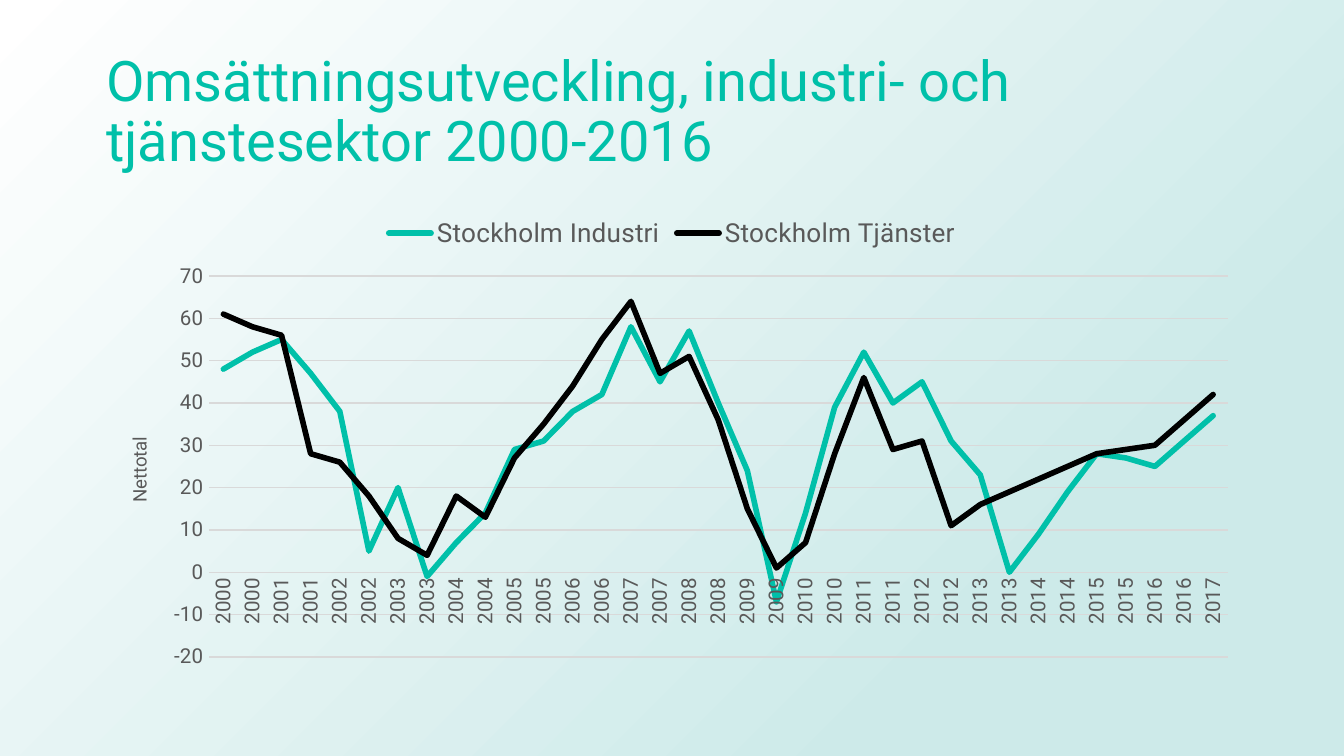
from lxml.etree import SubElement
from pptx import Presentation
from pptx.chart.data import CategoryChartData
from pptx.dml.color import RGBColor
from pptx.enum.chart import XL_CHART_TYPE, XL_LEGEND_POSITION, XL_TICK_MARK
from pptx.enum.shapes import MSO_SHAPE
from pptx.enum.text import MSO_ANCHOR
from pptx.oxml import parse_xml
from pptx.oxml.ns import nsdecls, qn
from pptx.util import Pt

PX = 914400 / 134.4
FONT = "Roboto"
TEAL, BLACK, GREY, PALE = "00C0A9", "000000", "595959", "D9D9D9"

YEARS = [str(2000 + i // 2) for i in range(35)]
SERIES = [
    ("Stockholm Industri", TEAL,
     [48, 52, 55, 47, 38, 5, 20, -1, 7, 14, 29, 31, 38, 42, 58, 45, 57, 40,
      24, -7, 14, 39, 52, 40, 45, 31, 23, 0, 9, 19, 28, 27, 25, 31, 37]),
    ("Stockholm Tjänster", BLACK,
     [61, 58, 56, 28, 26, 18, 8, 4, 18, 13, 27, 35, 44, 55, 64, 47, 51, 36,
      15, 1, 7, 28, 46, 29, 31, 11, 16, 19, 22, 25, 28, 29, 30, 36, 42]),
]


def px(*lengths):
    return [round(n * PX) for n in lengths]


def rgb(value):
    return RGBColor.from_string(value)


def style_font(font, size, color):
    font.name, font.size, font.bold = FONT, Pt(size), False
    font.color.rgb = rgb(color)


def style_line(line, color, width):
    line.color.rgb = rgb(color)
    line.width = Pt(width)


def write(tf, text, size=10, color=GREY, spacing=None):
    p = tf.paragraphs[0]
    p.line_spacing = spacing
    r = p.add_run()
    r.text = text
    style_font(r.font, size, color)


def place(parent, index, inner=False, **fractions):
    """Give a chart part a fixed place, in fractions of the chart."""
    for old in parent.findall(qn("c:layout")):
        parent.remove(old)
    layout = parent.makeelement(qn("c:layout"), {})
    parent.insert(index, layout)
    manual = SubElement(layout, qn("c:manualLayout"))
    if inner:
        SubElement(manual, qn("c:layoutTarget"), val="inner")
    for side in "xy":
        SubElement(manual, qn(f"c:{side}Mode"), val="edge")
    for side, value in fractions.items():
        SubElement(manual, qn(f"c:{side}"), val=str(value))


def add_background(s, x, y, w, h):
    sp = s.shapes.add_shape(MSO_SHAPE.RECTANGLE, *px(x, y, w, h))
    sp.shadow.inherit = False
    sp.line.fill.background()
    # Radial gradient centred on the bottom right corner
    sp._element.spPr.find(qn("a:prstGeom")).addnext(parse_xml(
        f'<a:gradFill {nsdecls("a")} rotWithShape="1"><a:gsLst>'
        '<a:gs pos="23000"><a:srgbClr val="CDEAE9"/></a:gs>'
        '<a:gs pos="100000"><a:srgbClr val="FFFFFF"/></a:gs></a:gsLst>'
        '<a:path path="circle"><a:fillToRect l="100000" t="100000"/></a:path>'
        '</a:gradFill>'))


def add_title(s, x, y, w, h):
    tf = s.shapes.add_textbox(*px(x, y, w, h)).text_frame
    tf.word_wrap = True
    tf.vertical_anchor = MSO_ANCHOR.MIDDLE
    write(tf, "Omsättningsutveckling, industri- och tjänstesektor 2000-2016",
          size=30, color=TEAL, spacing=0.9)


def add_turnover_chart(s, x, y, w, h):
    data = CategoryChartData(number_format="0")
    data.categories = YEARS
    for name, _, values in SERIES:
        data.add_series(name, values)
    chart = s.shapes.add_chart(XL_CHART_TYPE.LINE, *px(x, y, w, h), data).chart
    chart.has_title = False
    style_font(chart.font, 10, GREY)
    place(chart.plots[0]._element.getparent(), 0, inner=True,
          x=0.1, y=0.155, w=0.88, h=0.797)

    # Lines
    for series, (_, color, _) in zip(chart.plots[0].series, SERIES):
        series.smooth = False
        style_line(series.format.line, color, 3)
        series.format.line._ln.set("cap", "rnd")

    # Legend
    chart.has_legend = True
    chart.legend.position = XL_LEGEND_POSITION.TOP
    chart.legend.include_in_layout = False
    style_font(chart.legend.font, 14, GREY)

    # Axes
    years, net = chart.category_axis, chart.value_axis
    for axis in (years, net):
        axis.major_tick_mark = axis.minor_tick_mark = XL_TICK_MARK.NONE
        style_font(axis.tick_labels.font, 11, GREY)
    style_line(years.format.line, PALE, 0.75)
    body = years._element.find(qn("c:txPr")).find(qn("a:bodyPr"))
    body.set("rot", "-5400000")
    body.set("vert", "horz")
    net.minimum_scale, net.maximum_scale, net.major_unit = -20, 70, 10
    net.format.line.fill.background()
    style_line(net.major_gridlines.format.line, PALE, 0.75)

    # Value axis title
    tf = net.axis_title.text_frame
    write(tf, "Nettotal")
    tf._txBody.find(qn("a:bodyPr")).set("rot", "-5400000")
    place(net.axis_title._element, 1, x=0.027, y=0.485)


def main():
    prs = Presentation()
    prs.slide_width, prs.slide_height = px(1344, 756)
    s = prs.slides.add_slide(prs.slide_layouts[6])
    add_background(s, 0, 0, 1344, 756)
    add_title(s, 93, 40, 1158, 147)
    add_turnover_chart(s, 93, 202, 1158, 478)
    prs.save("out.pptx")


if __name__ == "__main__":
    main()
